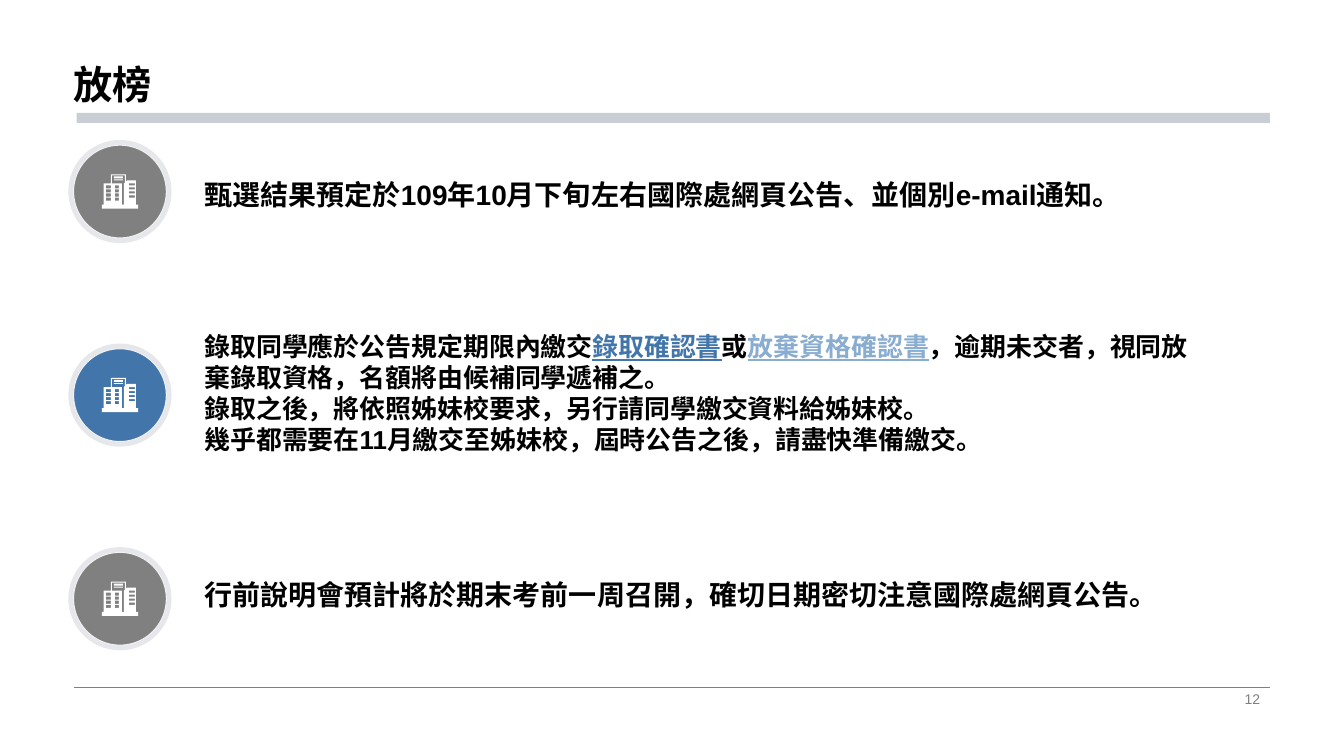
from lxml import etree
from pptx import Presentation
from pptx import util as u
from pptx.dml.color import RGBColor
from pptx.enum import shapes, text
from pptx.oxml import ns

BLACK = RGBColor(0x00, 0x00, 0x00)
WHITE = RGBColor(0xFF, 0xFF, 0xFF)
GRAY = RGBColor(0x80, 0x80, 0x80)
BAND = RGBColor(0xC9, 0xCE, 0xD5)
RIM = RGBColor(0xF2, 0xF2, 0xF2)
BLUE = RGBColor(0x42, 0x76, 0xAA)
PALE_BLUE = RGBColor(0x89, 0xAD, 0xD1)
HALO = RGBColor(0x77, 0x84, 0x95)

LEFT, RIGHT = 52.56, 907.2
BADGE, ROW_TOP, ROW_PITCH = 66.24, 103.68, 145.44
TEXT_LEFT = 138.96
ICON_UNIT = 0.72

# Building icon on a 36 by 34 grid: walls, sign frame, then windows
WALLS = [(9, 0), (24, 0), (24, 7), (25, 6), (34, 6), (34, 30), (36, 30),
         (36, 34), (0, 34), (0, 30), (2, 30), (2, 9), (9, 9)]
SIGN_FRAME = [(10, 1), (10, 9), (20, 9), (20, 30), (22, 30), (22, 9), (23, 8), (23, 1)]


def rect_outline(x, y, width, height):
    return [(x, y), (x, y + height), (x + width, y + height), (x + width, y)]


SIGN_LINES = [rect_outline(12, 2, 9, 2), rect_outline(12, 5, 9, 1)]
WINDOWS = [rect_outline(x, top + 4 * floor, width, height)
           for x, top, width, height in ((4, 11, 5, 3), (13, 11, 4, 3), (27, 9, 6, 2))
           for floor in range(4)]

# Each row: badge colour, text size, text top, width and height, paragraphs of (words, format)
LINK = {"underline": True}
ROWS = [
    (GRAY, 20, 116.64, 683.28, 37.44,
     [[("甄選結果預定於109年10月下旬左右國際處網頁公告、並個別e-mail通知。", {})]]),
    (BLUE, 18.5, 236.16, 729.36, 92.16,
     [[("錄取同學應於公告規定期限內繳交", {}),
       ("錄取確認書", {"color": BLUE, **LINK}),
       ("或", {}),
       ("放棄資格確認書", {"color": PALE_BLUE, **LINK}),
       ("，逾期未交者，視同放棄錄取資格，名額將由候補同學遞補之。", {})],
      [("錄取之後，將依照姊妹校要求，另行請同學繳交資料給姊妹校。", {})],
      [("幾乎都需要在11月繳交至姊妹校，屆時公告之後，請盡快準備繳交。", {})]]),
    (GRAY, 20, 394.56, 720, 45.36,
     [[("行前說明會預計將於期末考前一周召開，確切日期密切注意國際處網頁公告。", {})]]),
]


def pts(*lengths):
    return [u.Pt(length) for length in lengths]


def style_run(run, color=BLACK, **font_format):
    for key, value in {"name": "Arial", **font_format}.items():
        setattr(run.font, key, value)
    run.font.color.rgb = color


def set_frame(frame, anchor, **frame_format):
    values = {"word_wrap": True, "auto_size": text.MSO_AUTO_SIZE.NONE,
              "vertical_anchor": anchor, **frame_format}
    for key, value in values.items():
        setattr(frame, key, value)


def add_effects(item):
    return etree.SubElement(item._element.spPr, ns.qn("a:effectLst"))


def draw_header(slide, left, top, width, height):
    # Band under the title
    band = slide.shapes.add_shape(shapes.MSO_SHAPE.RECTANGLE,
                                  *pts(54.72, height, 852.48, 7.2))
    band.shadow.inherit = False
    band.fill.solid()
    band.fill.fore_color.rgb = BAND
    band.line.fill.background()
    # Title
    title = slide.shapes.title
    title.left, title.top, title.width, title.height = pts(left, top, width, height)
    set_frame(title.text_frame, text.MSO_ANCHOR.BOTTOM, margin_left=0, margin_right=0)
    heading = title.text_frame.paragraphs[0]
    heading.alignment = text.PP_ALIGN.LEFT
    heading.line_spacing = 0.9
    run = heading.add_run()
    run.text = "放榜"
    style_run(run, size=u.Pt(28), bold=True)


def draw_badge(group, left, top, color):
    # Disc with a halo a tenth larger than itself
    disc = group.shapes.add_shape(shapes.MSO_SHAPE.OVAL, *pts(left, top, BADGE, BADGE))
    disc.fill.solid()
    disc.fill.fore_color.rgb = color
    disc.line.color.rgb = RIM
    disc.line.width = u.Pt(0.75)
    halo = etree.SubElement(add_effects(disc), ns.qn("a:outerShdw"), sx="110000",
                            sy="110000", algn="ctr", rotWithShape="0")
    tint = etree.SubElement(halo, ns.qn("a:srgbClr"), val=str(HALO))
    etree.SubElement(tint, ns.qn("a:alpha"), val="19000")
    # Building icon
    builder = group.shapes.build_freeform(*WALLS[0], scale=u.Pt(ICON_UNIT))
    builder.add_line_segments(WALLS[1:], close=True)
    for outline in [SIGN_FRAME, *SIGN_LINES, *WINDOWS]:
        builder.move_to(*outline[0])
        builder.add_line_segments(outline[1:], close=True)
    building = builder.convert_to_shape(*pts(left + 20.16, top + 20.88))
    building.shadow.inherit = False
    building.fill.solid()
    building.fill.fore_color.rgb = WHITE
    building.line.fill.background()


def draw_row(slide, left, top, row):
    color, size, text_top, width, height, paragraphs = row
    group = slide.shapes.add_group_shape()
    draw_badge(group, left, top, color)
    # Notice beside the badge
    notice = group.shapes.add_textbox(*pts(TEXT_LEFT, text_top, width, height))
    frame = notice.text_frame
    set_frame(frame, text.MSO_ANCHOR.BOTTOM)
    for index, pieces in enumerate(paragraphs):
        paragraph = frame.add_paragraph() if index else frame.paragraphs[0]
        for words, run_format in pieces:
            run = paragraph.add_run()
            run.text = words
            style_run(run, size=u.Pt(size), bold=True, **run_format)


def draw_footer(slide, left, top, right):
    # Rule
    rule = slide.shapes.add_connector(shapes.MSO_CONNECTOR.STRAIGHT,
                                      *pts(left, top, right, top))
    rule.line.color.rgb = GRAY
    rule.line.width = u.Pt(0.5)
    add_effects(rule)
    # Page number
    page = slide.shapes.add_textbox(*pts(right - 228.96, top, 228.96, 16.56))
    set_frame(page.text_frame, text.MSO_ANCHOR.MIDDLE)
    paragraph = page.text_frame.paragraphs[0]
    paragraph.alignment = text.PP_ALIGN.RIGHT
    run = paragraph.add_run()
    run.text = "12"
    style_run(run, color=GRAY, size=u.Pt(10))


def main():
    deck = Presentation()
    deck.slide_width, deck.slide_height = pts(960, 540)
    slide = deck.slides.add_slide(deck.slide_layouts[5])
    draw_header(slide, LEFT, 0, RIGHT - LEFT, 80.64)
    for index, row in enumerate(ROWS):
        draw_row(slide, LEFT, ROW_TOP + index * ROW_PITCH, row)
    draw_footer(slide, LEFT, 491.04, RIGHT)
    deck.save("out.pptx")


if __name__ == "__main__":
    main()
